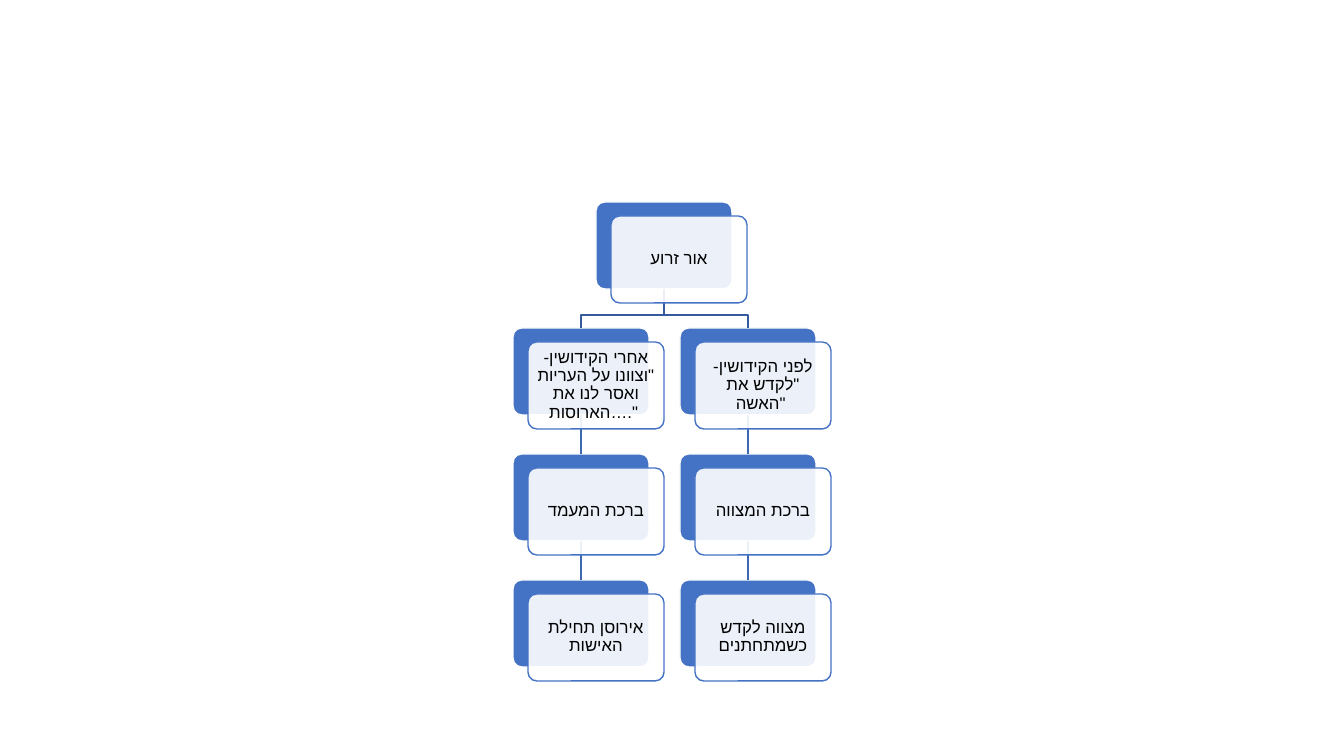
from dataclasses import dataclass
from itertools import pairwise

from lxml.etree import SubElement
from pptx import Presentation
from pptx.dml.color import RGBColor
from pptx.enum.shapes import MSO_CONNECTOR, MSO_SHAPE
from pptx.enum.text import MSO_ANCHOR, PP_ALIGN
from pptx.oxml.ns import qn
from pptx.util import Emu, Pt


@dataclass(frozen=True)
class Theme:
    """Colours, fonts and type sizes of the slide."""
    block: RGBColor = RGBColor(0x44, 0x72, 0xC4)
    white: RGBColor = RGBColor(0xFF, 0xFF, 0xFF)
    text: RGBColor = RGBColor(0, 0, 0)
    upper_link: RGBColor = RGBColor(0x36, 0x5B, 0x9D)
    lower_link: RGBColor = RGBColor(0x3E, 0x67, 0xB2)
    latin: str = "Calibri"
    hebrew: str = "Arial"
    size: Pt = Pt(12)
    line: Pt = Pt(1)


THEME = Theme()
BLOCK_WIDTH, BLOCK_HEIGHT = 136, 87
CARD_SHIFT = 15, 14
ROW_STEP, COLUMN_STEP = 126, 167
ROOT = ("אור זרוע", THEME.latin)
BRANCHES = [
    [
        ("אחרי הקידושין- \"וצוונו על העריות ואסר לנו את הארוסות….\" ", THEME.hebrew),
        ("ברכת המעמד", THEME.latin),
        ("אירוסן תחילת האישות", THEME.latin),
    ],
    [
        ("לפני הקידושין- \"לקדש את האשה\"\u00a0".replace("\u00a0", " "), THEME.hebrew),
        ("ברכת המצווה", THEME.hebrew),
        ("מצווה לקדש כשמתחתנים", THEME.hebrew),
    ],
]


def px(length):
    """Turn whole pixels into EMU."""
    return Emu(round(length * 914400 / 100.8))


def add_rounded(slide, left, top, fill, line):
    """Add one rounded rectangle of the common size."""
    shape = slide.shapes.add_shape(
        MSO_SHAPE.ROUNDED_RECTANGLE, px(left), px(top), px(BLOCK_WIDTH), px(BLOCK_HEIGHT))
    shape.adjustments[0] = 0.1
    shape.shadow.inherit = False
    shape.fill.solid()
    shape.fill.fore_color.rgb = fill
    shape.line.color.rgb = line
    shape.line.width = THEME.line
    return shape


def add_card(slide, block_left, block_top, label):
    """Add the translucent card with its text over a block."""
    text, font_name = label
    card = add_rounded(slide, block_left + CARD_SHIFT[0], block_top + CARD_SHIFT[1],
                       THEME.white, THEME.block)
    colour = card.fill._xPr.find(qn("a:solidFill"))[0]
    SubElement(colour, qn("a:alpha"), val="90000")
    frame = card.text_frame
    frame.word_wrap = True
    frame.vertical_anchor = MSO_ANCHOR.MIDDLE
    frame.margin_left = frame.margin_right = px(5)
    frame.margin_top = frame.margin_bottom = px(5)
    frame.text = text
    para = frame.paragraphs[0]
    para.alignment = PP_ALIGN.CENTER
    para.line_spacing = 0.9
    span = para.runs[0]
    span.font.size = THEME.size
    span.font.name = font_name
    span.font.color.rgb = THEME.text
    SubElement(span.font._element, qn("a:cs"), typeface=THEME.hebrew)


def add_straight_link(slide, upper, lower):
    """Join the bottom of one block to the top of the next."""
    link = slide.shapes.add_connector(MSO_CONNECTOR.STRAIGHT, 0, 0, 0, 0)
    link.begin_connect(upper, 2)
    link.end_connect(lower, 0)
    link.line.color.rgb = THEME.lower_link
    link.line.width = THEME.line
    SubElement(link._element.spPr, qn("a:effectLst"))


def add_bent_link(slide, root, child):
    """Draw the bent line from the root block to a branch head."""
    start_x = root.left + root.width // 2
    end_x = child.left + child.width // 2
    start_y = root.top + root.height
    bend_y = child.top - px(13)
    builder = slide.shapes.build_freeform(start_x, start_y)
    builder.add_line_segments(
        [(start_x, bend_y), (end_x, bend_y), (end_x, child.top)], close=False)
    link = builder.convert_to_shape()
    link.shadow.inherit = False
    link.fill.background()
    link.line.color.rgb = THEME.upper_link
    link.line.width = THEME.line


def add_tree(slide, left, top):
    """Place the whole hierarchy relative to its top left corner."""
    root_place = (left + COLUMN_STEP // 2, top)
    labels = {root_place: ROOT}
    columns = []
    for column, branch in enumerate(BRANCHES):
        places = [(left + column * COLUMN_STEP, top + row * ROW_STEP)
                  for row in range(1, len(branch) + 1)]
        columns.append(places)
        labels.update(zip(places, branch))
    blocks = {place: add_rounded(slide, *place, THEME.block, THEME.white)
              for place in labels}
    for places in columns:
        add_bent_link(slide, blocks[root_place], blocks[places[0]])
        for upper, lower in pairwise(places):
            add_straight_link(slide, blocks[upper], blocks[lower])
    for place, label in labels.items():
        add_card(slide, *place, label)


def main():
    """Build the deck and save it."""
    deck = Presentation()
    deck.slide_width, deck.slide_height = px(1344), px(756)
    slide = deck.slides.add_slide(deck.slide_layouts[6])
    add_tree(slide, 513, 202)
    deck.save("out.pptx")


if __name__ == "__main__":
    main()
